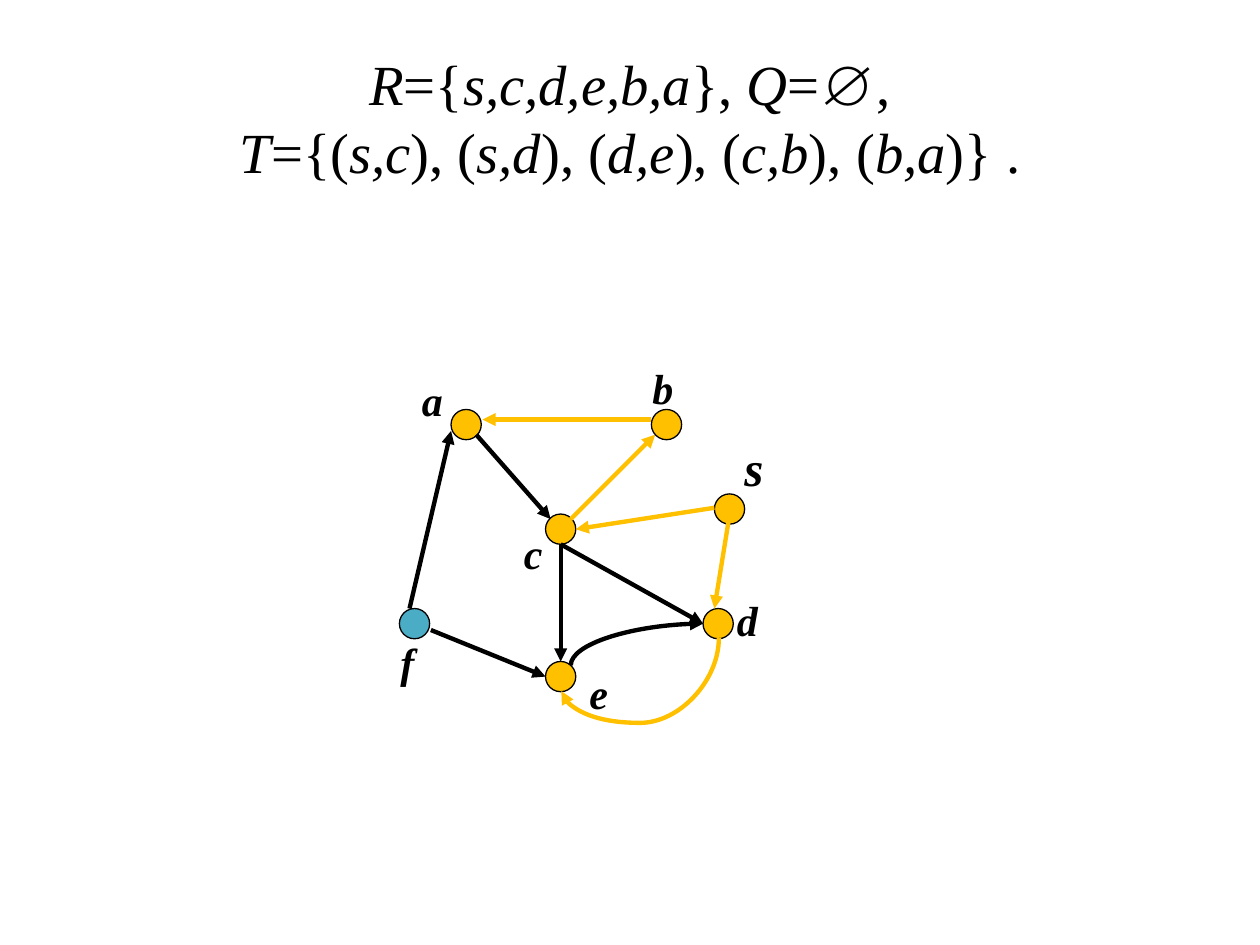
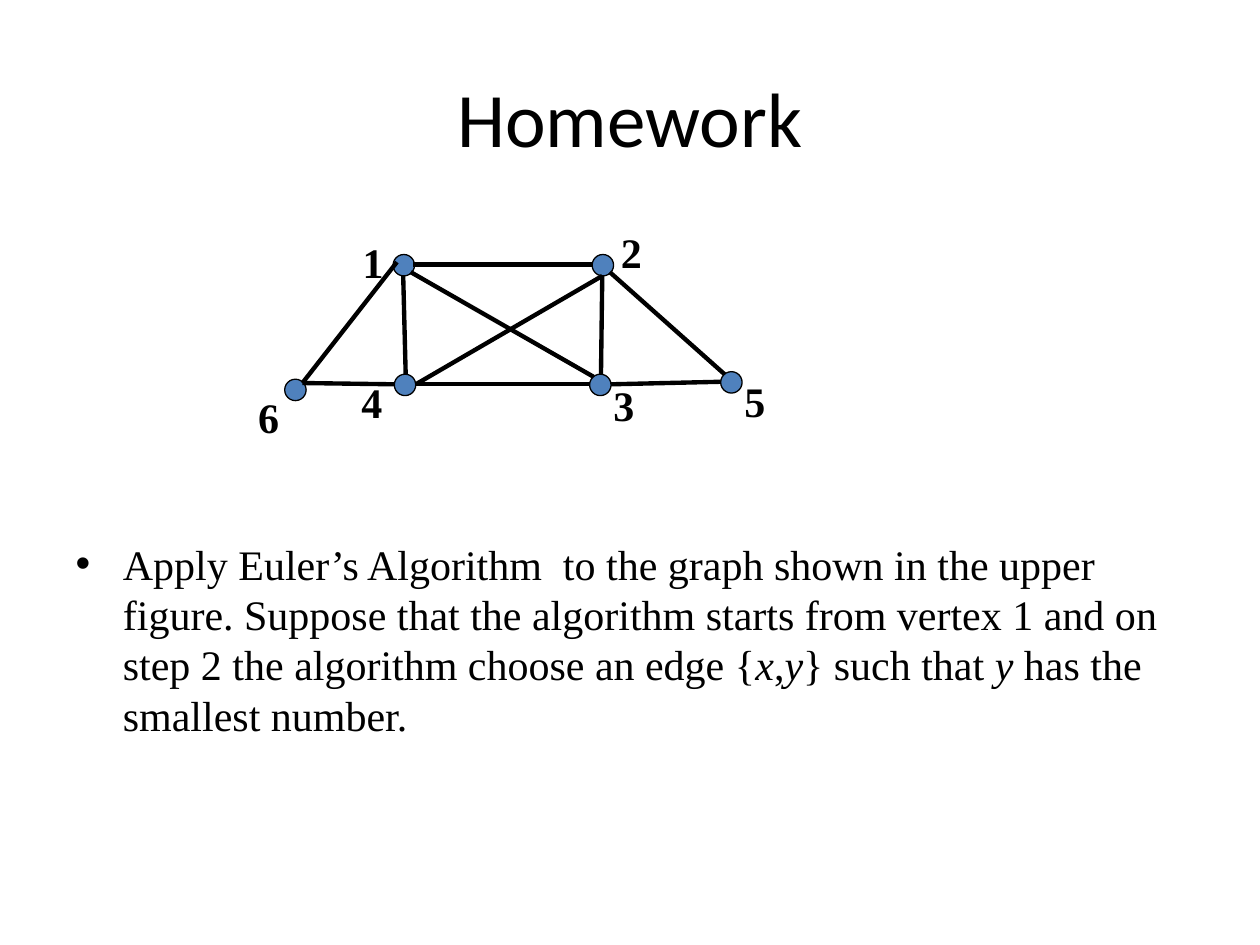
from dataclasses import dataclass
from typing import Any, Optional

from lxml import etree
from pptx import Presentation
from pptx.dml.color import RGBColor
from pptx.enum.shapes import MSO_CONNECTOR, MSO_SHAPE
from pptx.enum.text import MSO_ANCHOR, MSO_AUTO_SIZE, PP_ALIGN
from pptx.oxml.ns import qn
from pptx.util import Inches, Pt

STRAIGHT, CURVE = MSO_CONNECTOR.STRAIGHT, MSO_CONNECTOR.CURVE
OVAL = MSO_SHAPE.OVAL
CENTER, MIDDLE = PP_ALIGN.CENTER, MSO_ANCHOR.MIDDLE
NO_FIT, GROW = MSO_AUTO_SIZE.NONE, MSO_AUTO_SIZE.SHAPE_TO_FIT_TEXT

BLACK = RGBColor(0x00, 0x00, 0x00)
GOLD = RGBColor(0xFF, 0xC0, 0x00)
TEAL = RGBColor(0x4B, 0xAC, 0xC6)
BLUE = RGBColor(0x4F, 0x81, 0xBD)

SERIF, SANS = "Times New Roman", "Calibri"
SETS_FONT = {"name": SERIF, "size": Pt(32.4)}
HEADING_FONT = {"name": SANS, "size": Pt(44)}
TASK_FONT = {"name": SERIF, "size": Pt(24)}
NUMBER_FONT = {"name": SERIF, "size": Pt(24), "bold": True}
LETTER_FONT = {**NUMBER_FONT, "italic": True}
START_FONT = {**LETTER_FONT, "size": Pt(28)}

TITLE_BOX = (0.5, 0.3, 9, 1.25)
TASK_BOX = (0.5, 4.22, 9, 2.48)
Point = tuple[float, float]


@dataclass(frozen=True)
class Vertex:
    name: str
    corner: Point
    label_box: tuple[float, float, float, float]
    fill: RGBColor
    font: dict[str, Any]


@dataclass(frozen=True)
class Edge:
    start: Point
    end: Point
    color: RGBColor = BLACK


@dataclass(frozen=True)
class Arc:
    box: tuple[float, float, float, float]  # before the quarter turn
    preset: str
    color: RGBColor
    flipped: bool = False
    bend: Optional[int] = None


# Search graph: gold marks reached vertices and tree edges
SEARCH_VERTICES = [
    Vertex("a", (3.58, 3.25), (3.25, 2.92, 0.37, 0.5), GOLD, LETTER_FONT),
    Vertex("b", (5.17, 3.25), (5.08, 2.83, 0.37, 0.5), GOLD, LETTER_FONT),
    Vertex("c", (4.33, 4.08), (4.06, 4.14, 0.35, 0.51), GOLD, LETTER_FONT),
    Vertex("s", (5.67, 3.92), (5.81, 3.42, 0.35, 0.57), GOLD, START_FONT),
    Vertex("d", (5.58, 4.83), (5.75, 4.67, 0.37, 0.5), GOLD, LETTER_FONT),
    Vertex("e", (4.33, 5.25), (4.58, 5.25, 0.35, 0.5), GOLD, LETTER_FONT),
    Vertex("f", (3.17, 4.83), (3.08, 5, 0.31, 0.5), TEAL, LETTER_FONT),
]
SEARCH_EDGES = [
    Edge((3.78, 3.45), (4.37, 4.12)),
    Edge((4.53, 4.12), (5.2, 3.45), GOLD),
    Edge((4.45, 4.32), (4.45, 5.25)),
    Edge((5.67, 4.03), (4.57, 4.2), GOLD),
    Edge((4.45, 4.32), (5.58, 4.95)),
    Edge((5.17, 3.33), (3.83, 3.33), GOLD),
    Edge((3.25, 4.83), (3.58, 3.42)),
    Edge((3.42, 5), (4.33, 5.37)),
    Edge((5.78, 4.15), (5.67, 4.83), GOLD),
]
SEARCH_ARCS = [
    Arc((4.89, 4.59, 0.33, 1.05), "curvedConnector2", BLACK, flipped=True),
    Arc((4.87, 4.65, 0.42, 1.25), "curvedConnector3", GOLD, bend=160000),
]

# Homework graph
HOMEWORK_VERTICES = [
    Vertex(name, corner, (*label, 0.37, 0.5), BLUE, NUMBER_FONT)
    for name, corner, label in [
        ("1", (3.12, 2.02), (2.78, 1.83)),
        ("2", (4.7, 2.02), (4.83, 1.75)),
        ("3", (4.68, 2.97), (4.77, 2.96)),
        ("4", (3.13, 2.97), (2.77, 2.94)),
        ("5", (5.72, 2.95), (5.81, 2.93)),
        ("6", (2.26, 3.01), (1.95, 3.06)),
    ]
]
HOMEWORK_EDGES = [
    Edge((3.26, 2.16), (4.71, 2.99)),
    Edge((4.77, 2.97), (4.78, 2.19)),
    Edge((3.15, 2.08), (2.4, 3.04)),
    Edge((4.85, 3.05), (5.72, 3.03)),
    Edge((4.68, 3.05), (3.3, 3.05)),
    Edge((4.7, 2.1), (3.28, 2.1)),
    Edge((3.13, 3.05), (2.4, 3.04)),
    Edge((3.22, 2.97), (3.2, 2.19)),
    Edge((4.78, 2.19), (3.3, 3.05)),
    Edge((5.75, 2.97), (4.84, 2.16)),
]

# Asterisks switch italics on and off
SETS_TEXT = (" *R*={*s,c,d,e,b,a*}, *Q*=∅, \n"
             "*T*={(*s,c*), (*s,d*), (*d,e*), (*c,b*), (*b,a*)} .")
TASK_TEXT = ("Apply Euler’s Algorithm  to the graph shown in the upper figure. "
             "Suppose that the algorithm starts from vertex 1 and on step 2 the "
             "algorithm choose an edge {*x*,*y*} such that *y* has the smallest number.")


def set_font(font, values: dict[str, Any]) -> None:
    for attribute, value in values.items():
        setattr(font, attribute, value)
    font.color.rgb = BLACK


def write_marked(paragraph, marked: str, values: dict[str, Any]) -> None:
    for line_number, line in enumerate(marked.split("\n")):
        if line_number:
            paragraph.add_line_break()
        for position, piece in enumerate(line.split("*")):
            if piece:
                run = paragraph.add_run()
                run.text = piece
                set_font(run.font, {**values, "italic": position % 2 == 1})


def fill_placeholder(placeholder, box, marked: str, values: dict[str, Any]):
    for side, length in zip(("left", "top", "width", "height"), box):
        setattr(placeholder, side, Inches(length))
    frame = placeholder.text_frame
    frame.auto_size = NO_FIT
    write_marked(frame.paragraphs[0], marked, values)
    return frame


def add_title(slide, marked: str, values: dict[str, Any]) -> None:
    frame = fill_placeholder(slide.shapes.title, TITLE_BOX, marked, values)
    frame.vertical_anchor = MIDDLE
    frame.paragraphs[0].alignment = CENTER


def style_connector(connector, color: RGBColor, arrow: bool) -> None:
    connector.line.color.rgb = color
    connector.line.width = Pt(2.5)
    if arrow:
        etree.SubElement(connector.line._get_or_add_ln(), qn("a:tailEnd"), type="triangle")
    etree.SubElement(connector._element.spPr, qn("a:effectLst"))


def draw_edge(slide, edge: Edge, arrow: bool) -> None:
    ends = [Inches(length) for length in (*edge.start, *edge.end)]
    style_connector(slide.shapes.add_connector(STRAIGHT, *ends), edge.color, arrow)


def draw_arc(slide, arc: Arc) -> None:
    left, top, width, height = arc.box
    ends = [Inches(length) for length in (left, top, left + width, top + height)]
    connector = slide.shapes.add_connector(CURVE, *ends)
    properties = connector._element.spPr
    # Quarter turn, flips and bend
    frame = properties.find(qn("a:xfrm"))
    frame.set("rot", "5400000")
    if arc.flipped:
        frame.set("flipH", "1")
        frame.set("flipV", "1")
    geometry = properties.find(qn("a:prstGeom"))
    geometry.set("prst", arc.preset)
    if arc.bend is not None:
        guides = geometry.find(qn("a:avLst"))
        etree.SubElement(guides, qn("a:gd"), name="adj1", fmla=f"val {arc.bend}")
    style_connector(connector, arc.color, arrow=True)


def draw_vertex(slide, vertex: Vertex, diameter: float) -> None:
    left, top = vertex.corner
    dot = slide.shapes.add_shape(
        OVAL, Inches(left), Inches(top), Inches(diameter), Inches(diameter))
    dot.shadow.inherit = False
    dot.fill.solid()
    dot.fill.fore_color.rgb = vertex.fill
    dot.line.color.rgb = BLACK
    dot.line.width = Pt(0.75)


def draw_label(slide, vertex: Vertex) -> None:
    label = slide.shapes.add_textbox(*[Inches(length) for length in vertex.label_box])
    label.text_frame.word_wrap = False
    label.text_frame.auto_size = GROW
    run = label.text_frame.paragraphs[0].add_run()
    run.text = vertex.name
    set_font(run.font, vertex.font)


def draw_graph(slide, vertices: list[Vertex], edges: list[Edge],
               diameter: float, directed: bool) -> None:
    for vertex in vertices:
        draw_vertex(slide, vertex, diameter)
    for edge in edges:
        draw_edge(slide, edge, directed)
    for vertex in vertices:
        draw_label(slide, vertex)


def main() -> None:
    deck = Presentation()
    deck.slide_width, deck.slide_height = Inches(10), Inches(7.5)

    # Final state of the search
    search = deck.slides.add_slide(deck.slide_layouts[5])
    add_title(search, SETS_TEXT, SETS_FONT)
    draw_graph(search, SEARCH_VERTICES, SEARCH_EDGES, 0.24, directed=True)
    for arc in SEARCH_ARCS:
        draw_arc(search, arc)

    # Homework
    homework = deck.slides.add_slide(deck.slide_layouts[1])
    add_title(homework, "Homework", HEADING_FONT)
    fill_placeholder(homework.placeholders[1], TASK_BOX, TASK_TEXT, TASK_FONT)
    draw_graph(homework, HOMEWORK_VERTICES, HOMEWORK_EDGES, 0.17, directed=False)

    deck.save("out.pptx")


if __name__ == "__main__":
    main()
